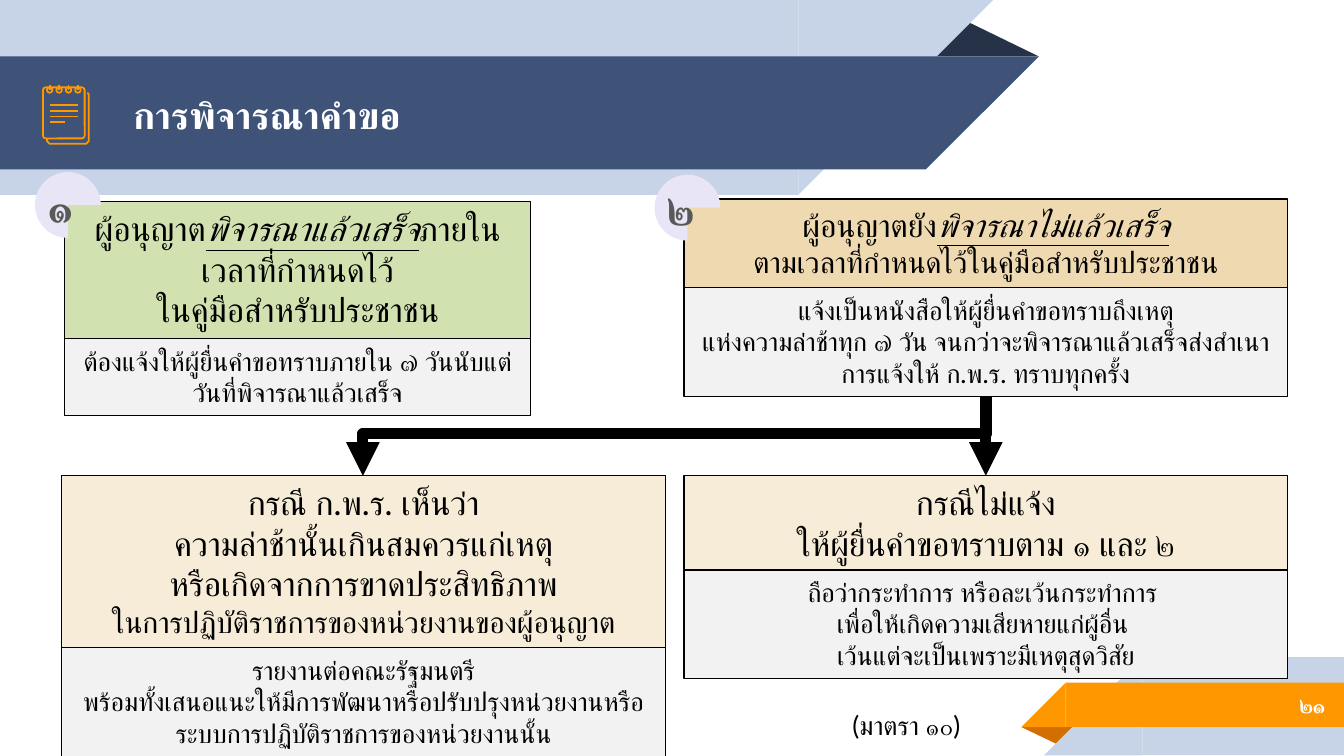
from lxml.etree import SubElement
from pptx import Presentation
from pptx.dml.color import RGBColor
from pptx.enum.shapes import MSO_CONNECTOR, MSO_SHAPE
from pptx.enum.text import MSO_ANCHOR, MSO_AUTO_SIZE, PP_ALIGN
from pptx.oxml.ns import qn
from pptx.util import Inches, Pt

FONT = "Lato"
COLORS = {
    "white": "FFFFFF", "black": "000000", "number": "595959",
    "pale": "C7D3E6", "navy": "3F5378", "fold": "263248",
    "orange": "FF9800", "dark_orange": "D26F00", "lilac": "E8E6F6",
    "green": "D2E1B0", "sand": "EFD9B0", "cream": "F7ECD7", "grey": "F2F2F2",
}


def rgb(name):
    return RGBColor.from_string(COLORS[name])


def add_block(shapes, kind, box, fill=None, line=None, width=0.75, flip=None):
    block = shapes.add_shape(kind, *map(Inches, box))
    block.shadow.inherit = False
    if fill:
        block.fill.solid()
        block.fill.fore_color.rgb = rgb(fill)
    else:
        block.fill.background()
    if line:
        block.line.color.rgb = rgb(line)
        block.line.width = Pt(width)
    else:
        block.line.fill.background()
    if flip:
        block._element.spPr.xfrm.set(flip, "1")
    return block


def add_line(shapes, start, end, color, width, kind=MSO_CONNECTOR.STRAIGHT, arrow=False):
    line = shapes.add_connector(kind, *map(Inches, (*start, *end)))
    line.line.color.rgb = rgb(color)
    line.line.width = Pt(width)
    if arrow:
        SubElement(line.line._get_or_add_ln(), qn("a:tailEnd"), type="triangle")
    SubElement(line._element.spPr, qn("a:effectLst"))
    return line


def style_run(run, size, color="black", bold=False, stressed=False):
    font = run.font
    font.name, font.size, font.bold = FONT, Pt(size), bold
    font.color.rgb = rgb(color)
    if stressed:
        font.italic = font.underline = True
    SubElement(run._r.get_or_add_rPr(), qn("a:cs"), typeface=FONT)


def write(frame, lines, align=PP_ALIGN.CENTER, anchor=MSO_ANCHOR.TOP, **style):
    """Write (text, size) lines; the part between bars is italic and underlined."""
    frame.vertical_anchor = anchor
    for index, (text, size) in enumerate(lines):
        paragraph = frame.add_paragraph() if index else frame.paragraphs[0]
        paragraph.alignment = align
        if "|" not in text:
            paragraph.text = text
            for run in paragraph.runs:
                style_run(run, size, **style)
            continue
        for part, words in enumerate(text.split("|")):
            if words:
                run = paragraph.add_run()
                run.text = words
                style_run(run, size, stressed=part == 1, **style)


def set_margins(frame, margin=0.1):
    frame.margin_left = frame.margin_right = Inches(margin)
    frame.margin_top = frame.margin_bottom = Inches(margin)


def add_header(slide):
    shapes = slide.shapes
    fold = add_block(shapes, MSO_SHAPE.ISOSCELES_TRIANGLE, (6.88, 0.14, 0.85, 0.28), "fold")
    fold.adjustments[0] = 0.324
    for top, length, height, fill in ((0, 5.94, 1.45, "pale"), (0.42, 6.89, 0.84, "navy")):
        add_block(shapes, MSO_SHAPE.RECTANGLE, (0, top, length, height), fill)
        add_block(shapes, MSO_SHAPE.RIGHT_TRIANGLE, (length, top, height, height), fill, flip="flipV")

    title = shapes.title
    shapes._spTree.append(title._element)  # in front of the bands
    title.left, title.top, title.width, title.height = map(Inches, (0.89, 0.43, 6.11, 0.84))
    set_margins(title.text_frame)
    write(title.text_frame, [("การพิจารณาคำขอ", 20)], PP_ALIGN.LEFT, MSO_ANCHOR.MIDDLE,
          color="white", bold=True)


def add_footer(slide):
    shapes = slide.shapes
    fold = add_block(shapes, MSO_SHAPE.ISOSCELES_TRIANGLE, (7.6, 5.41, 0.43, 0.14), "dark_orange")
    fold.adjustments[0] = 0.324
    fold.rotation = 180
    for left, top, length, height, fill in ((8.5, 4.89, 1.5, 0.73, "pale"),
                                            (7.93, 5.08, 2.07, 0.33, "orange")):
        add_block(shapes, MSO_SHAPE.RECTANGLE, (left, top, length, height), fill)
        add_block(shapes, MSO_SHAPE.RIGHT_TRIANGLE, (left - height, top, height, height), fill,
                  flip="flipH")
    number = shapes.add_textbox(*map(Inches, (8.33, 5.07, 1.63, 0.35))).text_frame
    number.word_wrap = True
    set_margins(number)
    write(number, [("๒๑", 12)], PP_ALIGN.RIGHT, MSO_ANCHOR.MIDDLE, color="white", bold=True)


def add_notepad(slide, left, top):
    parts = slide.shapes.add_group_shape().shapes
    pen = {"line": "orange", "width": 0.96}
    outline = [(0.03, 0.4), (0.03, 0.42), (0.05, 0.44), (0.32, 0.44), (0.34, 0.42),
               (0.34, 0.07), (0.33, 0.06)]
    points = [(Inches(left + x), Inches(top + y)) for x, y in outline]
    builder = parts.build_freeform(*points[0], scale=1.0)
    builder.add_line_segments(points[1:], close=False)
    back = builder.convert_to_shape()
    back.shadow.inherit = False
    back.fill.background()
    back.line.color.rgb = rgb("orange")
    back.line.width = Pt(0.96)

    page = add_block(parts, MSO_SHAPE.ROUNDED_RECTANGLE, (left, top + 0.02, 0.31, 0.38), **pen)
    page.adjustments[0] = 0.07
    for column in range(4):
        x = left + 0.05 + 0.07 * column
        add_block(parts, MSO_SHAPE.OVAL, (x - 0.02, top + 0.02, 0.04, 0.04), **pen)
        add_line(parts, (x, top), (x, top + 0.04), "orange", 0.96)
    for row, length in enumerate((0.21, 0.21, 0.21, 0.11)):
        y = top + 0.15 + 0.13 * row / 3
        add_line(parts, (left + 0.05, y), (left + 0.05 + length, y), "orange", 0.96)


def add_card(slide, left, top, width, fill, head, head_height, body, body_height):
    """Stack a coloured heading on a grey body and return both."""
    sections = []
    for y, height, color, lines in ((top, head_height, fill, head),
                                    (top + head_height, body_height, "grey", body)):
        section = add_block(slide.shapes, MSO_SHAPE.RECTANGLE, (left, y, width, height),
                            color, "black")
        section.text_frame.word_wrap = True
        section.text_frame.auto_size = MSO_AUTO_SIZE.SHAPE_TO_FIT_TEXT
        write(section.text_frame, lines)
        sections.append(section)
    return sections


def add_badge(slide, left, top, numeral):
    badge = add_block(slide.shapes, MSO_SHAPE.PIE, (left, top, 0.49, 0.49), "lilac")
    badge.rotation = 90
    badge.text_frame._txBody.bodyPr.set("vert", "vert270")
    write(badge.text_frame, [(numeral, 24)], PP_ALIGN.LEFT, MSO_ANCHOR.MIDDLE,
          color="number", bold=True)


def add_branches(slide, source, left_case, right_case):
    """Lead from the source box down to both cases."""
    start, end = (7.34, 2.95), (2.7, 3.54)
    elbow = add_line(slide.shapes, start, end, "black", 6, MSO_CONNECTOR.ELBOW, arrow=True)
    elbow.begin_connect(source, 2)
    elbow.end_connect(left_case, 0)
    # A quarter turn makes the elbow leave downwards.
    run, drop = start[0] - end[0], end[1] - start[1]
    elbow.left = Inches((start[0] + end[0] - drop) / 2)
    elbow.top = Inches((start[1] + end[1] - run) / 2)
    elbow.width, elbow.height = Inches(drop), Inches(run)
    xfrm = elbow._element.spPr.xfrm
    xfrm.attrib.pop("flipH", None)
    xfrm.set("rot", "5400000")
    guides = elbow._element.spPr.find(qn("a:prstGeom")).get_or_add_avLst()
    SubElement(guides, qn("a:gd"), name="adj1", fmla="val 47200")

    straight = add_line(slide.shapes, start, (start[0], end[1]), "black", 6, arrow=True)
    straight.begin_connect(source, 2)
    straight.end_connect(right_case, 0)


def main():
    deck = Presentation()
    deck.slide_width = Inches(10)
    deck.slide_height = deck.slide_width * 9 // 16
    slide = deck.slides.add_slide(deck.slide_layouts[5])
    add_header(slide)
    add_footer(slide)
    add_notepad(slide, 0.32, 0.63)

    section_note = slide.shapes.add_textbox(*map(Inches, (6.16, 5.23, 1.17, 0.34))).text_frame
    section_note.word_wrap = False
    section_note.auto_size = MSO_AUTO_SIZE.SHAPE_TO_FIT_TEXT
    write(section_note, [("(มาตรา ๑๐)", 14)])

    add_card(slide, 0.48, 1.5, 3.47, "green",
             [("ผู้อนุญาต|พิจารณาแล้วเสร็จ|ภายในเวลาที่กำหนดไว้", 18),
              ("ในคู่มือสำหรับประชาชน", 18)], 1.02,
             [("ต้องแจ้งให้ผู้ยื่นคำขอทราบภายใน ๗ วันนับแต่วันที่พิจารณาแล้วเสร็จ", 14)], 0.57)
    _, delay_notice = add_card(
        slide, 5.09, 1.48, 4.49, "sand",
        [("ผู้อนุญาตยัง|พิจารณาไม่แล้วเสร็จ|", 17),
         ("ตามเวลาที่กำหนดไว้ในคู่มือสำหรับประชาชน", 16)], 0.66,
        [("แจ้งเป็นหนังสือให้ผู้ยื่นคำขอทราบถึงเหตุ", 14),
         ("แห่งความล่าช้าทุก ๗ วัน จนกว่าจะพิจารณาแล้วเสร็จส่งสำเนาการแจ้งให้ ก.พ.ร. ทราบทุกครั้ง", 14)],
        0.81)
    undue_delay, _ = add_card(
        slide, 0.46, 3.54, 4.49, "cream",
        [("กรณี ก.พ.ร. เห็นว่า", 18), ("ความล่าช้านั้นเกินสมควรแก่เหตุ", 18),
         ("หรือเกิดจากการขาดประสิทธิภาพ", 18),
         ("ในการปฏิบัติราชการของหน่วยงานของผู้อนุญาต", 16)], 1.28,
        [("รายงานต่อคณะรัฐมนตรี", 14),
         ("พร้อมทั้งเสนอแนะให้มีการพัฒนาหรือปรับปรุงหน่วยงานหรือระบบการปฏิบัติราชการของหน่วยงานนั้น", 14)],
        0.81)
    no_notice, _ = add_card(
        slide, 5.09, 3.54, 4.49, "cream",
        [("กรณีไม่แจ้ง", 18), ("ให้ผู้ยื่นคำขอทราบตาม ๑ และ ๒", 18)], 0.7,
        [("ถือว่ากระทำการ หรือละเว้นกระทำการ ", 14),
         ("เพื่อให้เกิดความเสียหายแก่ผู้อื่น \vเว้นแต่จะเป็นเพราะมีเหตุสุดวิสัย", 14)], 0.81)
    add_branches(slide, delay_notice, undue_delay, no_notice)
    add_badge(slide, 0.26, 1.28, "๑")
    add_badge(slide, 4.87, 1.3, "๒")
    deck.save("out.pptx")


if __name__ == "__main__":
    main()
